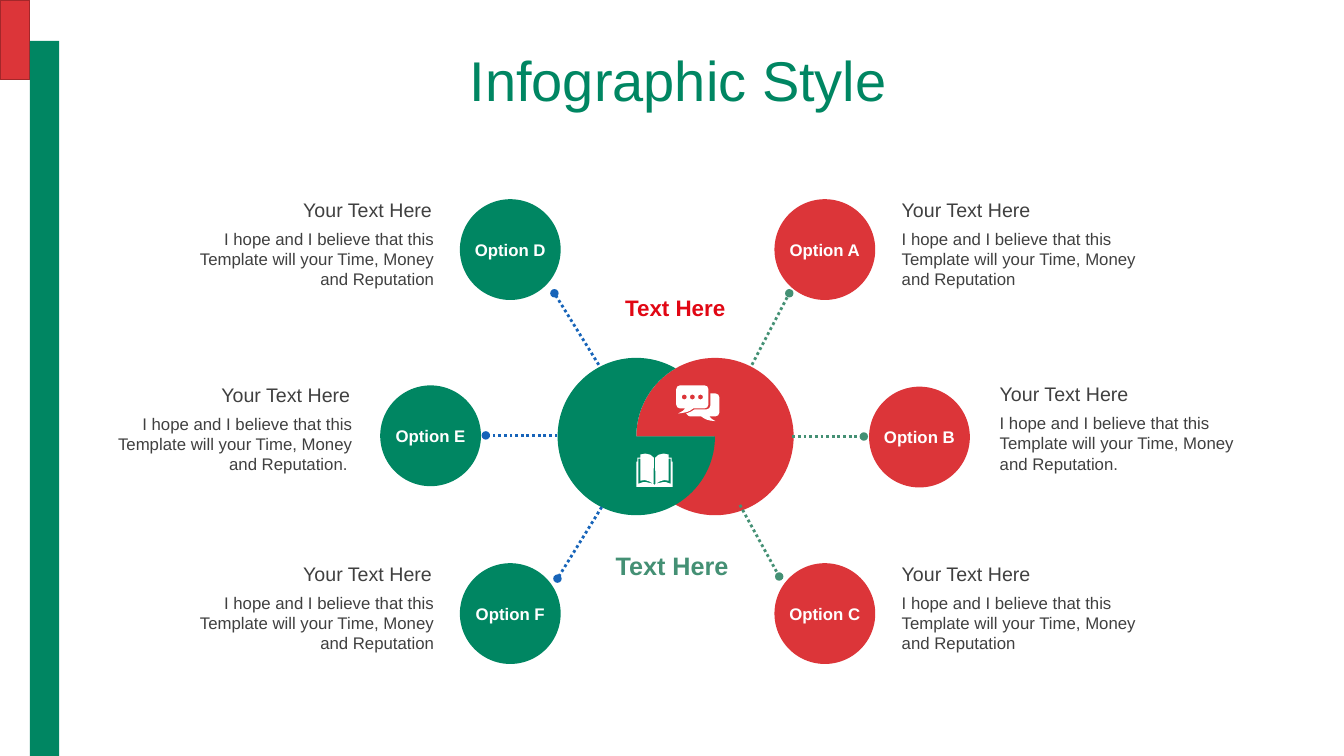
import math

from lxml import etree
from pptx import Presentation
from pptx.dml.color import RGBColor
from pptx.enum import dml, shapes, text
from pptx.oxml import ns
from pptx.util import Pt

GREEN = RGBColor(0x00, 0x86, 0x62)
RED = RGBColor(0xDC, 0x35, 0x39)
DARK_RED = RGBColor(0xA3, 0x27, 0x2A)
BRIGHT_RED = RGBColor(0xE1, 0x07, 0x14)
SAGE = RGBColor(0x44, 0x90, 0x74)
BLUE = RGBColor(0x17, 0x64, 0xB9)
GREY = RGBColor(0x40, 0x40, 0x40)
WHITE = RGBColor(0xFF, 0xFF, 0xFF)

LEFT, CENTER, RIGHT = text.PP_ALIGN.LEFT, text.PP_ALIGN.CENTER, text.PP_ALIGN.RIGHT
SENTENCE = "I hope and I believe that this Template will your Time, Money and Reputation"
OPTION_SIZE = 72

# name, circle left, circle top, caption left, caption top, sentence ending
RED_OPTIONS = [
    ("Option A", 553.2, 142.3, 637, 137.5, ""),
    ("Option B", 620.8, 276.2, 707, 269.2, "."),
    ("Option C", 553.2, 402.3, 637, 397.6, ""),
]
GREEN_OPTIONS = [
    ("Option D", 328.5, 142.3, 131.4, 137.5, ""),
    ("Option E", 271.6, 275.3, 73, 269.8, ". "),
    ("Option F", 328.5, 402.3, 131.4, 397.6, ""),
]
RED_SPOKES = [
    ((537.1, 260.6), (563.8, 209.5)),
    ((566, 311.8), (617, 311.8)),
    ((528.5, 360.7), (556.6, 411.8)),
]
GREEN_SPOKES = [
    ((427.7, 260.6), (396, 209.5)),
    ((398.2, 311), (347, 311)),
    ((429.8, 362.2), (398.2, 413.3)),
]

# Right half of the open book, measured from the top of its spine
HALF_BOOK = [
    (0, 22.3), (0.7, 21.6), (3.6, 20.9), (6, 20.4), (8.5, 20.5), (11.5, 21.6),
    (11.5, 3.6), (10.1, 3.6), (10.1, 19.4), (7, 18.9), (4, 19.8), (0.7, 21.6),
    (0.4, 3), (3, 0.8), (6.5, 0), (10.1, 0.7), (10.1, 2.9), (12.2, 2.9),
    (12.2, 5.8), (13, 5.8), (13, 23.8),
]


def arc(x, y, radius, start, end):
    """A start point, then Bezier curves (six numbers each) of at most 90 degrees."""
    def spot(angle, pull=0):
        a = math.radians(angle)
        return (x + radius * (math.cos(a) - pull * math.sin(a)),
                y + radius * (math.sin(a) + pull * math.cos(a)))

    steps = [spot(start)]
    while start != end:
        turn = max(-90, min(90, end - start))
        pull = 4 / 3 * math.tan(math.radians(turn) / 4)
        steps.append(spot(start, pull) + spot(start + turn, -pull) + spot(start + turn))
        start += turn
    return steps


class Page:
    """The current slide and the style its elements share."""

    font = "Arial"

    def __init__(self, deck):
        self.slide = deck.slides.add_slide(deck.slide_layouts[5])
        self.shapes = self.slide.shapes

    def style(self, para, size, color, align, bold=False):
        para.alignment = align
        para.font.name = self.font
        para.font.size = Pt(size)
        para.font.bold = bold
        para.font.color.rgb = color

    def paint(self, shape, fill, line=None):
        shape.shadow.inherit = False
        shape.fill.solid()
        shape.fill.fore_color.rgb = fill
        if line is None:
            shape.line.fill.background()
        else:
            shape.line.color.rgb = line
            shape.line.width = Pt(1)

    def title(self, words, *place):
        box = self.shapes.title
        box.left, box.top, box.width, box.height = map(Pt, place)
        box.text_frame.text = words
        box.text_frame.vertical_anchor = text.MSO_ANCHOR.MIDDLE
        para = box.text_frame.paragraphs[0]
        para.line_spacing = 0.9
        self.style(para, 40, GREEN, CENTER)

    def preset(self, kind, place, fill, line=None):
        shape = self.shapes.add_shape(kind, *map(Pt, place))
        self.paint(shape, fill, line)
        return shape

    def outline(self, contours, fill, left=0, top=0):
        """Closed contours of points and curves; an inner contour is a hole."""
        builder = self.shapes.build_freeform(
            Pt(left + contours[0][0][0]), Pt(top + contours[0][0][1]), scale=1.0)
        for number, contour in enumerate(contours):
            corners = [(Pt(left + step[i]), Pt(top + step[i + 1]))
                       for step in contour for i in range(0, len(step), 2)]
            if number:
                builder.move_to(*corners[0])
            builder.add_line_segments(corners[1:])
        shape = builder.convert_to_shape()
        self.paint(shape, fill)

        segments = iter(list(shape._element.iter(ns.qn("a:lnTo"))))
        for step in (step for contour in contours for step in contour[1:]):
            first = next(segments)
            if len(step) == 6:
                first.tag = ns.qn("a:cubicBezTo")
                for extra in (next(segments), next(segments)):
                    first.append(extra[0])
                    extra.getparent().remove(extra)

    def label(self, words, place, size, color, align=LEFT, bold=False):
        box = self.shapes.add_textbox(*map(Pt, place))
        box.text_frame.word_wrap = True
        box.text_frame.text = words
        self.style(box.text_frame.paragraphs[0], size, color, align, bold)

    def spoke(self, start, end, color):
        """Dotted line with a round end."""
        line = self.shapes.add_connector(
            shapes.MSO_CONNECTOR.STRAIGHT, *map(Pt, start + end))
        line.line.color.rgb = color
        line.line.width = Pt(2)
        line.line.dash_style = dml.MSO_LINE.ROUND_DOT
        etree.SubElement(line.line._get_or_add_ln(), ns.qn("a:tailEnd"), type="oval")
        etree.SubElement(line._element.spPr, ns.qn("a:effectLst"))

    def option(self, name, left, top, fill):
        circle = self.preset(
            shapes.MSO_SHAPE.OVAL, (left, top, OPTION_SIZE, OPTION_SIZE), fill)
        frame = circle.text_frame
        frame.word_wrap = False
        frame.margin_left = frame.margin_right = 0
        frame.vertical_anchor = text.MSO_ANCHOR.MIDDLE
        frame.text = name
        self.style(frame.paragraphs[0], 12, WHITE, CENTER, bold=True)

    def caption(self, left, top, ending, align):
        self.label("Your Text Here", (left, top, 184.3, 24.2), 14, GREY, align)
        self.label(SENTENCE + ending, (left, top + 22.2, 185.8, 51), 12, GREY, align)


def draw_hub(page):
    radius, middle = 56.2, 311.8
    green_x, red_x = 454.5, 510.7
    pie = page.preset(
        shapes.MSO_SHAPE.PIE,
        (red_x - radius, middle - radius, 2 * radius, 2 * radius), RED)
    pie.rotation = 180
    pie.adjustments[0] = 0
    pie.adjustments[1] = 180.48
    page.outline([arc(green_x, middle, radius, 0, 300)
                  + arc(red_x, middle, radius, 240, 180)[1:]], GREEN)


def draw_book(page, spine, top):
    mirrored = [(-x, y) for x, y in reversed(HALF_BOOK[1:])]
    page.outline([HALF_BOOK + mirrored], WHITE, spine, top)


def draw_chat(page, left, top):
    corner = 2.9
    front = (arc(2.9, 2.9, corner, 180, 270) + arc(20.2, 2.9, corner, 270, 360)
             + arc(20.2, 13.7, corner, 0, 90)
             + [(12.2, 16.6), (8.6, 19.4, 7.2, 19.4, 1.4, 20.2),
                (5, 18, 5, 18.7, 6.5, 16.6)]
             + arc(2.9, 13.7, corner, 90, 180))
    back = ([(24.5, 5.8)] + arc(28, 8.7, corner, 270, 360)
            + arc(28, 19.4, corner, 0, 90)
            + [(23.8, 22.3), (24.5, 23, 24.5, 23.8, 28.1, 25.6),
               (22.3, 25.2, 20.9, 24.5, 18, 22.3), (10.1, 22.3),
               (9.4, 22.3, 7.9, 21.6, 7.2, 20.2),
               (9.4, 19.4, 11.5, 18.7, 13, 17.3)]
            + arc(21.6, 14.4, corner, 90, 0))
    dots = [arc(x, 8.4, 1.8, 0, 360) for x in (5.8, 11.6, 17.4)]
    page.outline([front, back] + dots, WHITE, left, top)


def main():
    deck = Presentation()
    deck.slide_width, deck.slide_height = Pt(960), Pt(540)
    page = Page(deck)

    page.preset(shapes.MSO_SHAPE.RECTANGLE, (0, 0, 21.3, 57), RED, DARK_RED)
    page.preset(shapes.MSO_SHAPE.RECTANGLE, (21.3, 29.3, 21.1, 510.7), GREEN)
    page.title("Infographic Style", 69.3, 31, 830, 57)

    draw_hub(page)
    page.label("Text Here", (436.2, 206.4, 92.2, 26.6), 16, BRIGHT_RED, CENTER, bold=True)
    page.label("Text Here", (431.5, 389.5, 97.2, 28.8), 18, SAGE, CENTER, bold=True)

    for options, spokes, fill, line_color, align in (
            (RED_OPTIONS, RED_SPOKES, RED, SAGE, LEFT),
            (GREEN_OPTIONS, GREEN_SPOKES, GREEN, BLUE, RIGHT)):
        for name, left, top, caption_left, caption_top, ending in options:
            page.option(name, left, top, fill)
            page.caption(caption_left, caption_top, ending, align)
        for start, end in spokes:
            page.spoke(start, end, line_color)

    draw_book(page, 467.5, 324)
    draw_chat(page, 483, 275.2)
    deck.save("out.pptx")


if __name__ == "__main__":
    main()
